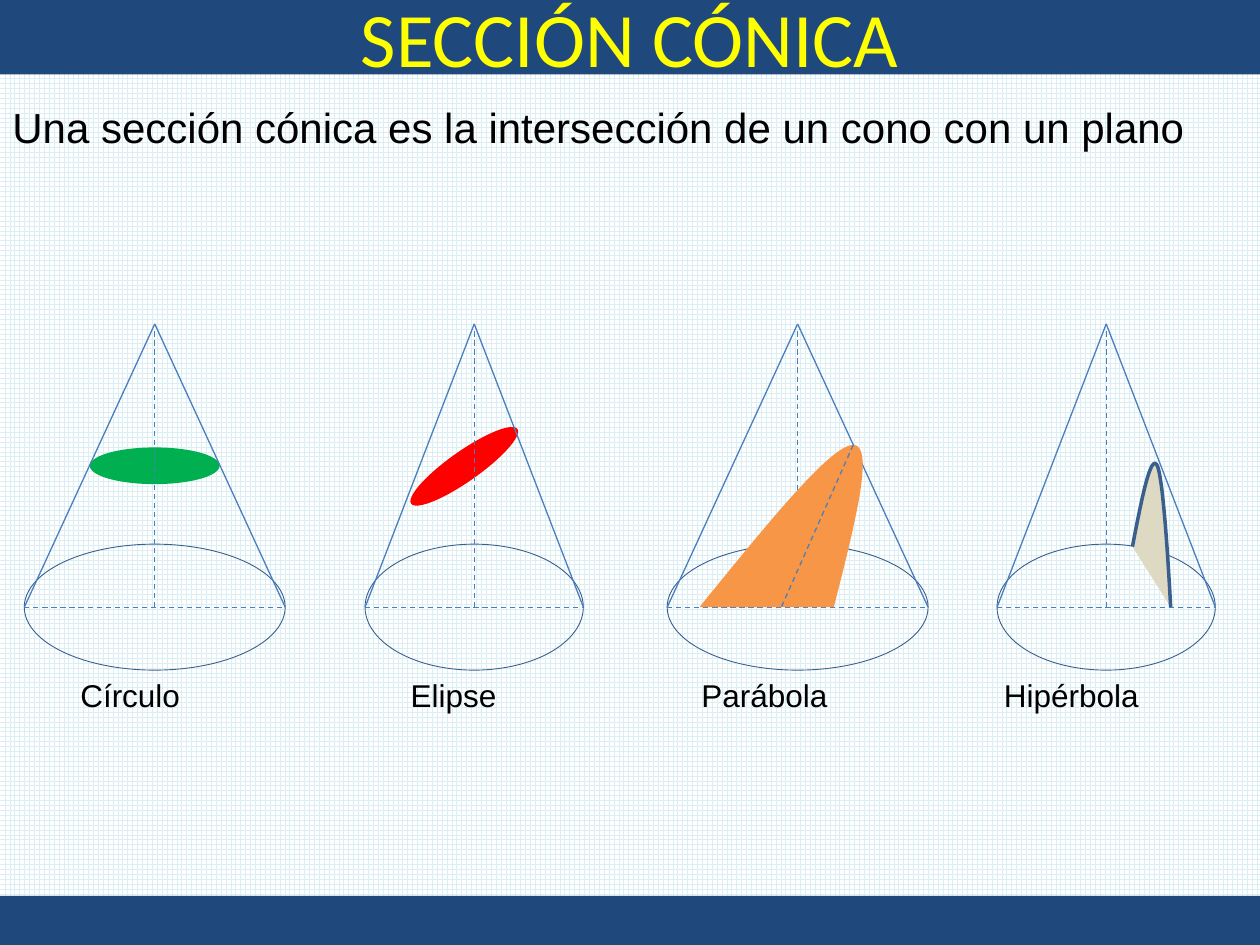
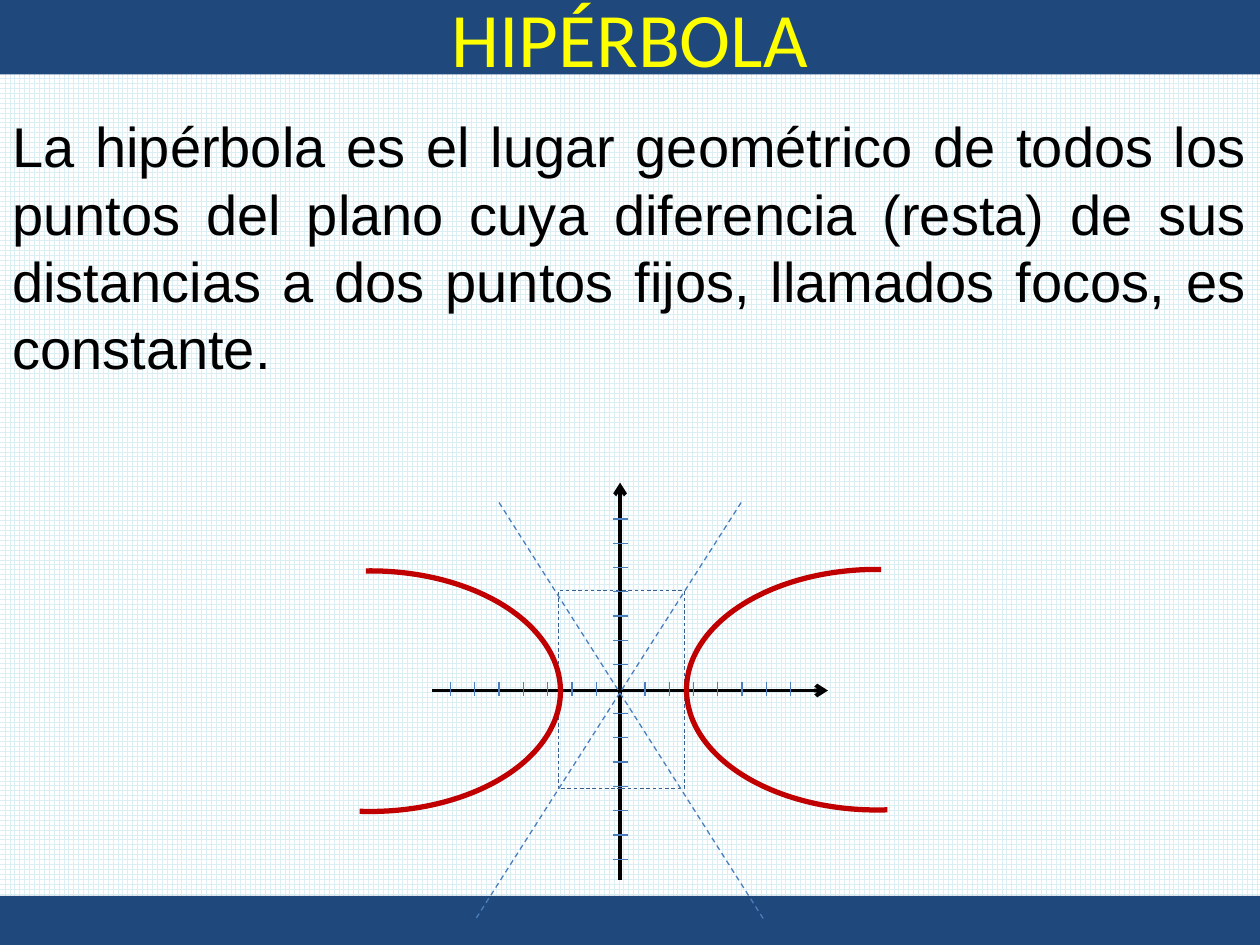
from lxml import etree
from pptx import Presentation
from pptx.dml.color import RGBColor
from pptx.enum.dml import MSO_LINE, MSO_PATTERN
from pptx.enum.shapes import MSO_CONNECTOR, MSO_SHAPE
from pptx.enum.text import MSO_ANCHOR, MSO_AUTO_SIZE, PP_ALIGN
from pptx.oxml.ns import qn
from pptx.util import Cm, Pt

DASH = MSO_LINE.DASH
STRAIGHT = MSO_CONNECTOR.STRAIGHT
RECTANGLE, ELLIPSE, ARC = MSO_SHAPE.RECTANGLE, MSO_SHAPE.OVAL, MSO_SHAPE.ARC
LEFT, CENTER, JUSTIFY = PP_ALIGN.LEFT, PP_ALIGN.CENTER, PP_ALIGN.JUSTIFY

NAVY = RGBColor(0x1F, 0x49, 0x7D)
YELLOW = RGBColor(0xFF, 0xFF, 0x00)
BLACK = RGBColor(0x00, 0x00, 0x00)
WHITE = RGBColor(0xFF, 0xFF, 0xFF)
GRID_BLUE = RGBColor(0xDB, 0xEE, 0xF4)
LINE_BLUE = RGBColor(0x4B, 0x7E, 0xBC)
OUTLINE_BLUE = RGBColor(0x3A, 0x5F, 0x8C)
GREEN = RGBColor(0x00, 0xB0, 0x50)
RED = RGBColor(0xFF, 0x00, 0x00)
ORANGE = RGBColor(0xF7, 0x96, 0x46)
SAND = RGBColor(0xDD, 0xD9, 0xC3)
DARK_RED = RGBColor(0xC0, 0x00, 0x00)

# All measures below are in centimetres.
SLIDE_WIDTH, SLIDE_HEIGHT = 25.4, 19.05
HEADER_HEIGHT, FOOTER_TOP = 1.5, 18.06
APEX_Y, BASE_Y, BASE_HEIGHT = 6.53, 12.24, 2.54
WIDE, NARROW = 2.63, 2.2
ORIGIN_X, ORIGIN_Y = 12.5, 13.92
TICK_GAP, TICK_HALF, TICKS_PER_SIDE = 0.49, 0.15, 7


def paint(shape, fill=None, outline=None, weight=0.5, dash=None):
    shape.shadow.inherit = False
    if fill is None:
        shape.fill.background()
    else:
        shape.fill.solid()
        shape.fill.fore_color.rgb = fill
    if outline is None:
        shape.line.fill.background()
    else:
        shape.line.color.rgb = outline
        shape.line.width = Pt(weight)
        if dash:
            shape.line.dash_style = dash


def add_figure(shapes, kind, left, top, width, height, **look):
    figure = shapes.add_shape(kind, Cm(left), Cm(top), Cm(width), Cm(height))
    paint(figure, **look)
    return figure


def add_line(shapes, start, end, color=LINE_BLUE, weight=0.75, dash=None, arrow=False):
    line = shapes.add_connector(STRAIGHT, *map(Cm, start + end))
    line.line.color.rgb = color
    line.line.width = Pt(weight)
    if dash:
        line.line.dash_style = dash
    properties = line._element.spPr
    if arrow:
        etree.SubElement(properties.find(qn("a:ln")), qn("a:tailEnd"), type="arrow")
    etree.SubElement(properties, qn("a:effectLst"))


def write(paragraph, words, size, font, color, align):
    paragraph.alignment = align
    run = paragraph.add_run()
    run.text = words
    run.font.size = Pt(size)
    run.font.name = font
    run.font.color.rgb = color
    return run


def add_text(slide, words, left, top, width, height, size, align=LEFT):
    box = slide.shapes.add_textbox(Cm(left), Cm(top), Cm(width), Cm(height))
    frame = box.text_frame
    frame.word_wrap = True
    frame.auto_size = MSO_AUTO_SIZE.SHAPE_TO_FIT_TEXT
    write(frame.paragraphs[0], words, size, "Arial", BLACK, align)


def outline_letters(run, color, weight):
    outline = etree.Element(qn("a:ln"), w=str(Pt(weight)))
    fill = etree.SubElement(outline, qn("a:solidFill"))
    etree.SubElement(fill, qn("a:srgbClr"), val=str(color))
    run.font._element.insert(0, outline)


def add_titled_slide(deck, title):
    """Blank slide on grid paper with the title band and the footer band."""
    slide = deck.slides.add_slide(deck.slide_layouts[6])
    paper = slide.background.fill
    paper.patterned()
    paper.pattern = MSO_PATTERN.LARGE_GRID
    paper.fore_color.rgb = GRID_BLUE
    paper.back_color.rgb = WHITE
    header = add_figure(slide.shapes, RECTANGLE, 0, 0, SLIDE_WIDTH, HEADER_HEIGHT, fill=NAVY)
    header.text_frame.vertical_anchor = MSO_ANCHOR.MIDDLE
    heading = write(header.text_frame.paragraphs[0], title, 44, "Calibri", YELLOW, CENTER)
    outline_letters(heading, DARK_RED, 0.75)
    add_figure(slide.shapes, RECTANGLE, 0, FOOTER_TOP, SLIDE_WIDTH,
               SLIDE_HEIGHT - FOOTER_TOP, fill=NAVY)
    return slide


def add_cone(slide, axis_x, radius):
    cone = slide.shapes.add_group_shape().shapes
    apex = (axis_x, APEX_Y)
    base_left, base_right = (axis_x - radius, BASE_Y), (axis_x + radius, BASE_Y)
    add_figure(cone, ELLIPSE, axis_x - radius, BASE_Y - BASE_HEIGHT / 2,
               2 * radius, BASE_HEIGHT, outline=OUTLINE_BLUE)
    add_line(cone, apex, base_left)
    add_line(cone, apex, base_right)
    add_line(cone, base_left, base_right, dash=DASH)
    add_line(cone, (axis_x, APEX_Y + 0.15), (axis_x, BASE_Y), dash=DASH)


def add_elliptic_cut(slide, center_x, center_y, height, color, angle=0):
    width = 2.62
    cut = add_figure(slide.shapes, ELLIPSE, center_x - width / 2, center_y - height / 2,
                     width, height, fill=color)
    cut.rotation = angle


def bezier(start, pull_start, pull_end, end, steps=24):
    """Points after start along a cubic curve."""
    points = []
    for step in range(1, steps + 1):
        t = step / steps
        weights = ((1 - t) ** 3, 3 * t * (1 - t) ** 2, 3 * t * t * (1 - t), t ** 3)
        points.append(tuple(
            sum(w * value for w, value in zip(weights, values))
            for values in zip(start, pull_start, pull_end, end)))
    return points


def add_curved_cut(slide, nodes, closed, **look):
    """Draw chained cubic curves; nodes alternate ends and pairs of controls."""
    points = []
    for first in range(0, len(nodes) - 1, 3):
        points += bezier(*nodes[first:first + 4])
    builder = slide.shapes.build_freeform(*map(Cm, nodes[0]))
    builder.add_line_segments([(Cm(x), Cm(y)) for x, y in points], close=closed)
    paint(builder.convert_to_shape(), **look)


def add_axes(slide):
    axes = slide.shapes.add_group_shape().shapes
    for start, end in (((ORIGIN_X, 17.73), (ORIGIN_X, 9.73)),
                       ((8.71, ORIGIN_Y), (16.69, ORIGIN_Y))):
        add_line(axes, start, end, BLACK, 2.25, arrow=True)
    tick_x, tick_y = ORIGIN_X + 0.01, ORIGIN_Y - 0.03
    for step in range(-TICKS_PER_SIDE, TICKS_PER_SIDE + 1):
        if step:
            x, y = tick_x + step * TICK_GAP, tick_y + step * TICK_GAP
            add_line(axes, (x, tick_y - TICK_HALF), (x, tick_y + TICK_HALF))
            add_line(axes, (tick_x - TICK_HALF, y), (tick_x + TICK_HALF, y))


def add_branch(slide, left, top, mirrored=False):
    branch = add_figure(slide.shapes, ARC, left, top, 7.67, 4.85, outline=DARK_RED, weight=3)
    # Angles of 268 and 95 degrees, in units of 5/3 degree.
    branch.adjustments[0], branch.adjustments[1] = 160.75, 57.03
    if mirrored:
        branch._element.spPr.xfrm.set("flipH", "1")


def build_conic_section(deck):
    slide = add_titled_slide(deck, "SECCIÓN CÓNICA")
    add_text(slide, "Una sección cónica es la intersección de un cono con un plano",
             0, 1.93, SLIDE_WIDTH, 2.31, 24)

    add_elliptic_cut(slide, 3.12, 9.39, 0.74, GREEN)
    add_cone(slide, 3.12, WIDE)
    add_elliptic_cut(slide, 9.36, 9.4, 0.61, RED, angle=324.9)
    add_cone(slide, 9.56, NARROW)

    add_cone(slide, 16.08, WIDE)
    vertex = (17.2, 8.97)
    parabola = [(14.1, BASE_Y), (15.42, 10.62), (16.74, 8.97), vertex,
                (17.65, 8.97), (17.22, 10.62), (16.81, BASE_Y)]
    add_curved_cut(slide, parabola, True, fill=ORANGE)
    add_line(slide.shapes, vertex, (15.75, BASE_Y), dash=DASH)

    add_cone(slide, 22.3, NARROW)
    hyperbola = [(22.83, 11.02), (23.01, 10.08), (23.19, 9.17), (23.32, 9.37),
                 (23.47, 9.58), (23.6, BASE_Y), (23.6, BASE_Y)]
    add_curved_cut(slide, hyperbola, False, fill=SAND, outline=OUTLINE_BLUE, weight=2)

    for name, left, width in (("Círculo", 1.37, 3.48), ("Elipse", 8.03, 3.07),
                              ("Parábola", 13.89, 4.37), ("Hipérbola", 19.99, 4.62)):
        add_text(slide, name, left, 13.51, width, 1.02, 18)


def build_hyperbola(deck):
    slide = add_titled_slide(deck, "HIPÉRBOLA")
    add_text(slide, "La hipérbola es el lugar geométrico de todos los puntos del plano "
             "cuya diferencia (resta) de sus distancias a dos puntos fijos, llamados "
             "focos, es constante.", 0, 2.13, SLIDE_WIDTH, 8.46, 32, JUSTIFY)
    add_axes(slide)
    add_figure(slide.shapes, RECTANGLE, 11.25, 11.91, 2.54, 3.99,
               outline=OUTLINE_BLUE, dash=DASH)
    for top_x, bottom_x in ((10.06, 15.4), (14.94, 9.58)):
        add_line(slide.shapes, (top_x, 10.13), (bottom_x, 18.54), dash=DASH)
    add_branch(slide, 3.63, 11.51)
    add_branch(slide, 13.84, 11.48, mirrored=True)


def main():
    deck = Presentation()
    deck.slide_width, deck.slide_height = Cm(SLIDE_WIDTH), Cm(SLIDE_HEIGHT)
    build_conic_section(deck)
    build_hyperbola(deck)
    deck.save("out.pptx")


if __name__ == "__main__":
    main()
